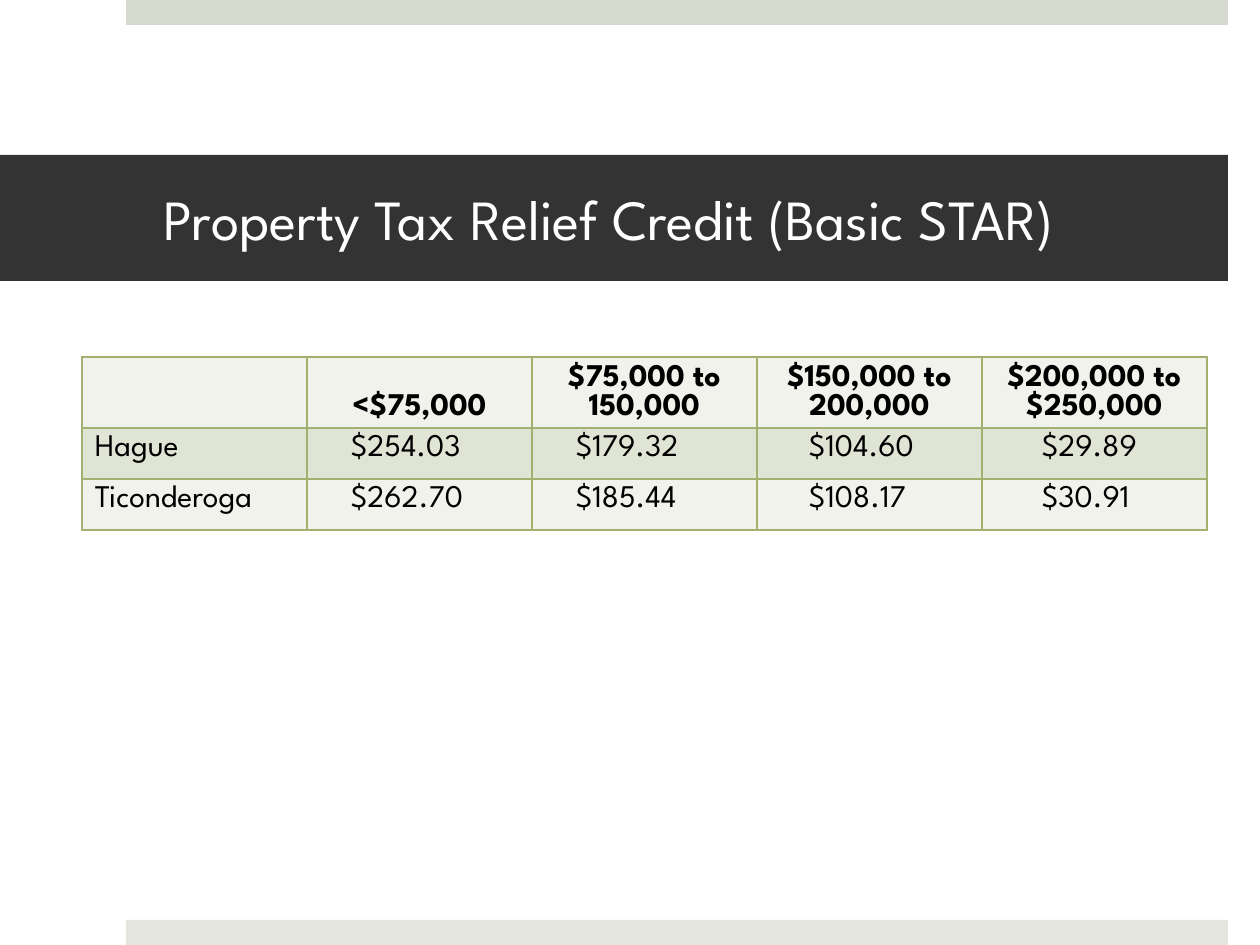
from dataclasses import dataclass

import pptx
import pptx.dml.color
import pptx.enum.shapes
import pptx.enum.text
import pptx.oxml.ns
import pptx.util
from lxml import etree

PIXELS_PER_INCH = 126
ALIGN = pptx.enum.text.PP_ALIGN
ANCHOR = pptx.enum.text.MSO_ANCHOR


@dataclass(frozen=True)
class Theme:
    font: str = "League Spartan"
    title_size: float = 32.4
    table_size: float = 18
    border_width: float = 1
    top_bar: str = "D6D9CD"
    bottom_bar: str = "E4E6DE"
    title_band: str = "333333"
    title_text: str = "FFFFFF"
    table_text: str = "000000"
    border: str = "A2B170"
    light_row: str = "F0F2EB"
    dark_row: str = "E0E4D5"


@dataclass(frozen=True)
class Bar:
    left: int
    top: int
    width: int
    height: int
    color: str


@dataclass(frozen=True)
class TableRow:
    texts: tuple[str, ...]
    height: int
    color: str
    is_header: bool = False


THEME = Theme()

TOP_BAR = Bar(126, 0, 1102, 25, THEME.top_bar)
BOTTOM_BAR = Bar(126, 920, 1102, 25, THEME.bottom_bar)
TITLE_BAND = Bar(0, 155, 1228, 126, THEME.title_band)

TABLE_LEFT, TABLE_TOP, COLUMN_WIDTH = 82, 357, 225
VALUE_INSETS = (13, 44, 44, 52, 60)  # left inset of each column's values
CREDIT_ROWS = (
    TableRow(("", "<$75,000", "$75,000 to 150,000", "$150,000 to 200,000",
              "$200,000 to $250,000"), 71, THEME.light_row, is_header=True),
    TableRow(("Hague", "$254.03", "$179.32", "$104.60", "$29.89"),
             51, THEME.dark_row),
    TableRow(("Ticonderoga", "$262.70", "$185.44", "$108.17", "$30.91"),
             51, THEME.light_row),
)


def px(length: int) -> pptx.util.Emu:
    return pptx.util.Emu(round(length * 914400 / PIXELS_PER_INCH))


def rgb(color: str) -> pptx.dml.color.RGBColor:
    return pptx.dml.color.RGBColor.from_string(color)


def style_paragraph(paragraph, size: float, color: str, bold: bool = False,
                    alignment=ALIGN.LEFT) -> None:
    paragraph.alignment = alignment
    paragraph.font.name = THEME.font
    paragraph.font.size = pptx.util.Pt(size)
    paragraph.font.bold = bold
    paragraph.font.color.rgb = rgb(color)


def draw_bar(slide, bar: Bar):
    shape = slide.shapes.add_shape(
        pptx.enum.shapes.MSO_SHAPE.RECTANGLE,
        px(bar.left), px(bar.top), px(bar.width), px(bar.height))
    shape.shadow.inherit = False
    shape.fill.solid()
    shape.fill.fore_color.rgb = rgb(bar.color)
    shape.line.fill.background()
    return shape


def draw_title(slide, text: str) -> None:
    frame = draw_bar(slide, TITLE_BAND).text_frame
    frame.word_wrap = True
    frame.vertical_anchor = ANCHOR.MIDDLE
    frame.margin_left, frame.margin_right = px(164), px(38)
    frame.margin_top = frame.margin_bottom = px(6)
    paragraph = frame.paragraphs[0]
    paragraph.text = text
    style_paragraph(paragraph, THEME.title_size, THEME.title_text)


def add_borders(cell) -> None:
    properties = cell._tc.get_or_add_tcPr()
    qn = pptx.oxml.ns.qn
    for side in ("a:lnL", "a:lnR", "a:lnT", "a:lnB"):
        line = etree.SubElement(properties, qn(side),
                                w=str(pptx.util.Pt(THEME.border_width)))
        fill = etree.SubElement(line, qn("a:solidFill"))
        etree.SubElement(fill, qn("a:srgbClr"), val=THEME.border)


def fill_cell(cell, text: str, row: TableRow, value_inset: int) -> None:
    add_borders(cell)
    cell.fill.solid()
    cell.fill.fore_color.rgb = rgb(row.color)
    cell.margin_left = px(13 if row.is_header else value_inset)
    cell.margin_right = px(13)
    cell.margin_top = cell.margin_bottom = px(6)
    cell.vertical_anchor = ANCHOR.BOTTOM if row.is_header else ANCHOR.TOP
    paragraph = cell.text_frame.paragraphs[0]
    paragraph.text = text
    style_paragraph(paragraph, THEME.table_size, THEME.table_text,
                    bold=row.is_header,
                    alignment=ALIGN.CENTER if row.is_header else ALIGN.LEFT)


def draw_table(slide, rows: tuple[TableRow, ...]) -> None:
    column_count = len(VALUE_INSETS)
    table = slide.shapes.add_table(
        len(rows), column_count, px(TABLE_LEFT), px(TABLE_TOP),
        px(COLUMN_WIDTH * column_count),
        px(sum(row.height for row in rows))).table
    table.first_row = table.horz_banding = False
    for column in table.columns:
        column.width = px(COLUMN_WIDTH)
    for row_index, row in enumerate(rows):
        table.rows[row_index].height = px(row.height)
        for column_index, text in enumerate(row.texts):
            fill_cell(table.cell(row_index, column_index), text, row,
                      VALUE_INSETS[column_index])


def main() -> None:
    presentation = pptx.Presentation()
    presentation.slide_width, presentation.slide_height = px(1260), px(945)
    slide = presentation.slides.add_slide(presentation.slide_layouts[6])

    # Edge bars
    draw_bar(slide, TOP_BAR)
    draw_bar(slide, BOTTOM_BAR)

    # Title and credit amounts
    draw_title(slide, "Property Tax Relief Credit (Basic STAR)")
    draw_table(slide, CREDIT_ROWS)

    presentation.save("out.pptx")


if __name__ == "__main__":
    main()
